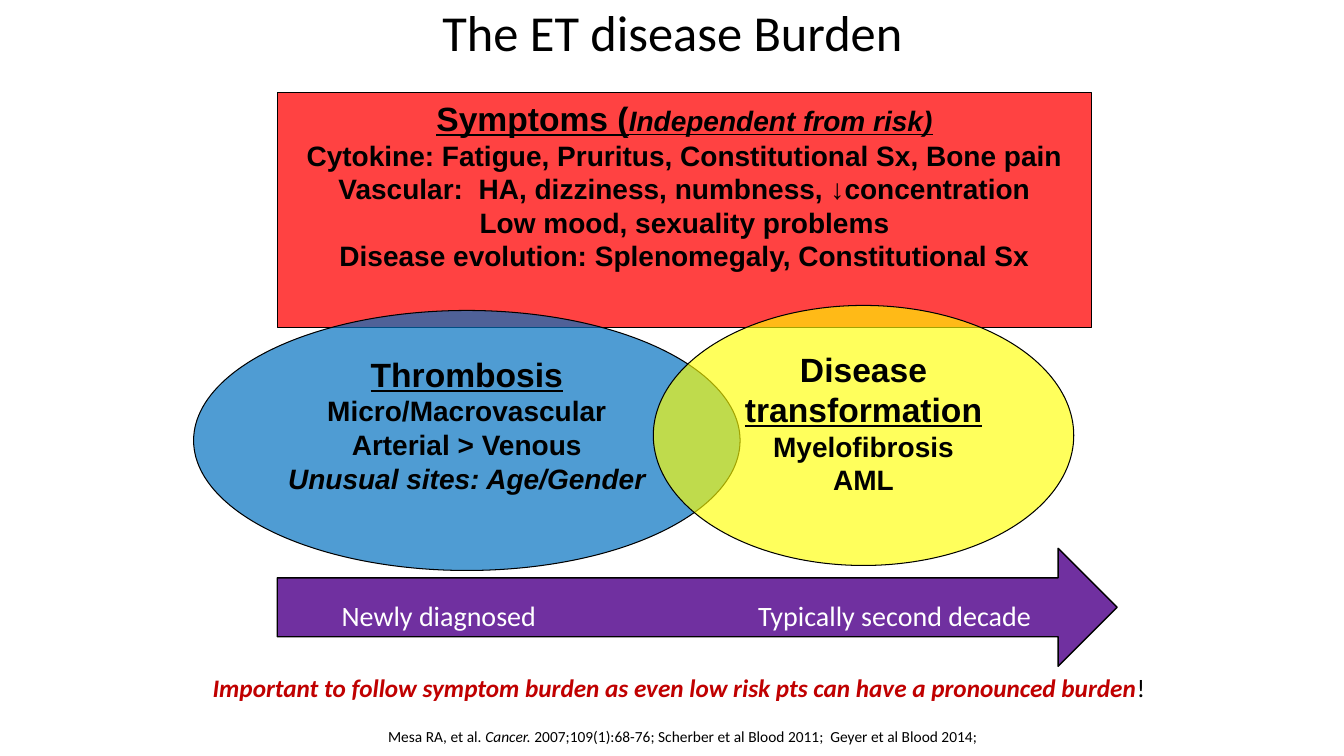
import pptx
import pptx.util
import pptx.dml.color
import pptx.enum.shapes
import pptx.enum.text
import pptx.oxml.ns
from lxml import etree

Inches = pptx.util.Inches
SHAPE = pptx.enum.shapes.MSO_SHAPE
ALIGN = pptx.enum.text.PP_ALIGN
ANCHOR = pptx.enum.text.MSO_ANCHOR
AUTOSIZE = pptx.enum.text.MSO_AUTO_SIZE

COLOURS = {
    "black": "000000",
    "white": "FFFFFF",
    "symptoms": "FF0000",
    "thrombosis": "0070C0",
    "transformation": "FFFF00",
    "timeline": "7030A0",
    "message": "C00000",
}

# Text formats; the colour is a key of COLOURS
TITLE = {"name": "Calibri", "size": 36, "colour": "black"}
DETAIL = {"name": "Arial", "size": 20, "colour": "black", "bold": True}
HEADING = {**DETAIL, "size": 24}
HEADING_LINE = {**HEADING, "underline": True}
STAGE = {"name": "Calibri", "size": 20, "colour": "white"}
CITATION = {"name": "Calibri", "size": 11, "colour": "black"}
PLAIN = {"name": "Calibri", "size": 18, "colour": "black"}
MESSAGE = {**PLAIN, "colour": "message", "bold": True, "italic": True}


def rgb(colour):
    return pptx.dml.color.RGBColor.from_string(COLOURS[colour])


def place(part, box):
    for side, length in zip(("left", "top", "width", "height"), box):
        setattr(part, side, Inches(length))


def write(frame, paragraphs, align):
    """Fill a frame; each paragraph is a list of (text, format) runs."""
    for number, runs in enumerate(paragraphs):
        paragraph = frame.add_paragraph() if number else frame.paragraphs[0]
        paragraph.alignment = align
        for text, style in runs:
            run = paragraph.add_run()
            run.text = text
            for key, value in style.items():
                if key == "colour":
                    run.font.color.rgb = rgb(value)
                elif key == "size":
                    run.font.size = pptx.util.Pt(value)
                else:
                    setattr(run.font, key, value)


def add_title(slide, text, box):
    title = slide.shapes.title
    place(title, box)
    title.text_frame.auto_size = AUTOSIZE.NONE
    title.text_frame.vertical_anchor = ANCHOR.TOP
    write(title.text_frame, [[(text, TITLE)]], ALIGN.CENTER)
    title.text_frame.paragraphs[0].line_spacing = 0.9


def add_area(slide, kind, box, colour, paragraphs=(), opacity=100, border=0.75):
    area = slide.shapes.add_shape(kind, *map(Inches, box))
    area.shadow.inherit = False
    area.fill.solid()
    area.fill.fore_color.rgb = rgb(colour)
    if opacity < 100:
        qn = pptx.oxml.ns.qn
        solid = area.fill._xPr.find(qn("a:solidFill"))
        etree.SubElement(solid[0], qn("a:alpha"), val=str(opacity * 1000))
    area.line.color.rgb = rgb("black")
    area.line.width = pptx.util.Pt(border)
    area.text_frame.vertical_anchor = ANCHOR.TOP
    write(area.text_frame, paragraphs, ALIGN.CENTER)


def add_label(slide, box, runs, wrap=True):
    frame = slide.shapes.add_textbox(*map(Inches, box)).text_frame
    frame.word_wrap = wrap
    frame.auto_size = AUTOSIZE.SHAPE_TO_FIT_TEXT
    write(frame, [runs], ALIGN.LEFT)


def main():
    deck = pptx.Presentation()
    deck.slide_width, deck.slide_height = Inches(13.33), Inches(7.5)
    slide = deck.slides.add_slide(deck.slide_layouts.get_by_name("Title Only"))
    add_title(slide, "The ET disease Burden", (1.67, 0.03, 10, 1.21))

    # Three overlapping areas of burden
    symptoms = [
        "Cytokine: Fatigue, Pruritus, Constitutional Sx, Bone pain",
        "Vascular:  HA, dizziness, numbness, ↓concentration",
        "Low mood, sexuality problems",
        "Disease evolution: Splenomegaly, Constitutional Sx",
    ]
    independent = {**HEADING_LINE, "size": 20, "italic": True}
    add_area(slide, SHAPE.FLOWCHART_PROCESS, (2.75, 0.92, 8.08, 2.33), "symptoms", [
        [("Symptoms (", HEADING_LINE), ("Independent from risk)", independent)],
        *[[(line, DETAIL)] for line in symptoms],
    ], opacity=74)
    add_area(slide, SHAPE.OVAL, (1.92, 3.08, 5.42, 2.58), "thrombosis", [
        [("Thrombosis", HEADING_LINE)],
        [("Micro/Macrovascular", DETAIL)],
        [("Arterial > Venous", DETAIL)],
        [("Unusual sites: Age/Gender", {**DETAIL, "italic": True})],
    ], opacity=69)
    add_area(slide, SHAPE.OVAL, (6.48, 3.03, 4.17, 2.58), "transformation", [
        [("Disease ", HEADING), ("transformation", HEADING_LINE)],
        [("Myelofibrosis", DETAIL)],
        [("AML", DETAIL)],
    ], opacity=64)

    # Timeline arrow with its two stages
    add_area(slide, SHAPE.RIGHT_ARROW, (2.75, 5.44, 8.33, 1.17), "timeline", border=1)
    for text, left, width in (("Newly diagnosed", 3.29, 2.67),
                              ("Typically second decade", 7.42, 3.33)):
        add_label(slide, (left, 5.89, width, 0.44), [(text, STAGE)])

    # Key message and citation
    add_label(slide, (2.01, 6.62, 9.56, 0.4), [
        ("Important to follow symptom burden as even low risk pts "
         "can have a pronounced burden", MESSAGE),
        ("!", PLAIN),
    ], wrap=False)
    add_label(slide, (3.75, 7.16, 9.88, 0.29), [
        ("Mesa RA, et al. ", CITATION),
        ("Cancer. ", {**CITATION, "italic": True}),
        ("2007;109(1):68-76; Scherber et al Blood 2011;  Geyer et al Blood 2014;",
         CITATION),
    ])

    deck.save("out.pptx")


if __name__ == "__main__":
    main()
